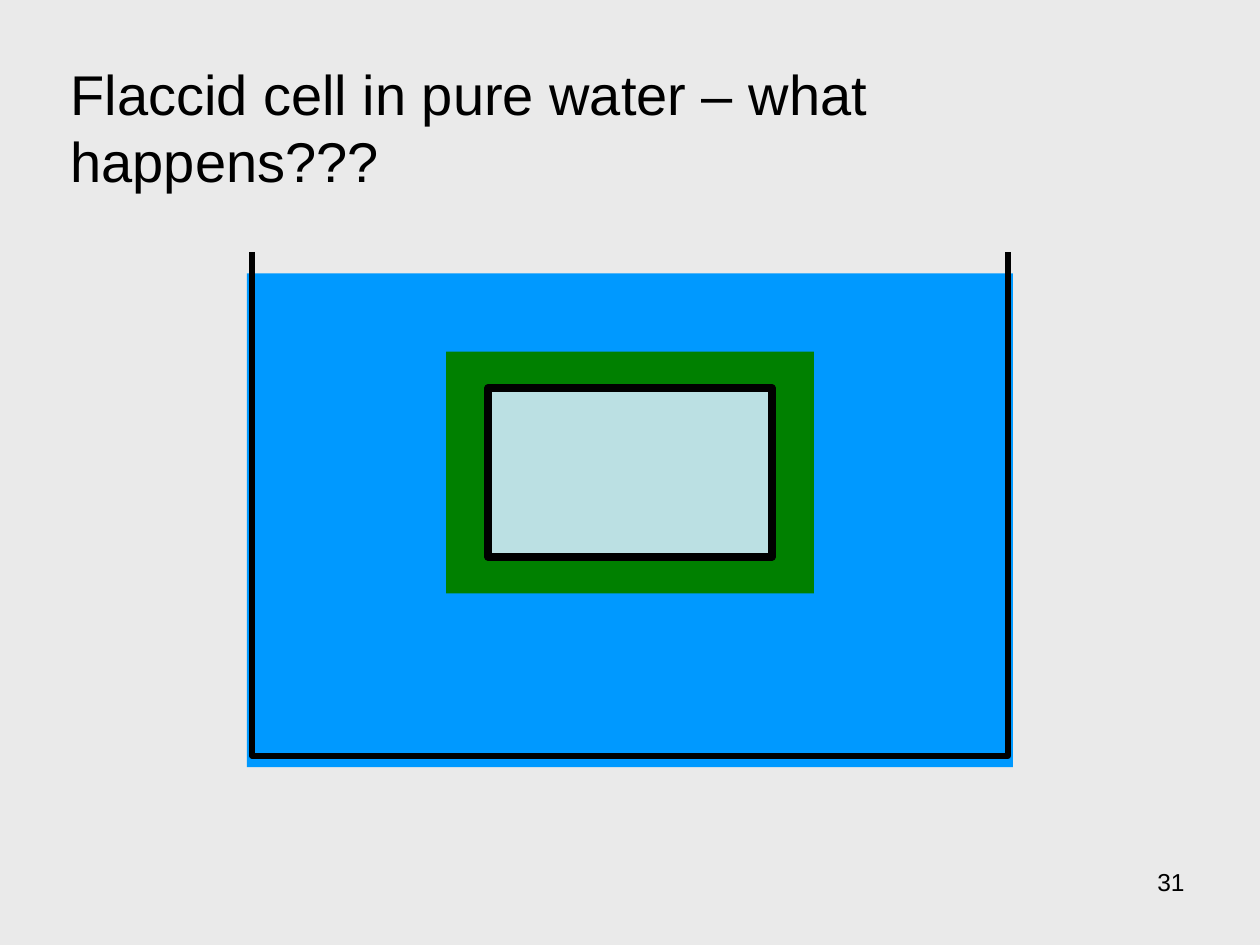
from pptx import Presentation
from pptx.dml.color import RGBColor
from pptx.enum.shapes import MSO_SHAPE as Preset
from pptx.enum.text import MSO_ANCHOR as Anchor, PP_ALIGN as Align
from pptx.util import Inches, Pt

BACKGROUND = RGBColor(0xEA, 0xEA, 0xEA)
BLACK = RGBColor(0x00, 0x00, 0x00)
WATER = RGBColor(0x00, 0x99, 0xFF)
CELL_WALL = RGBColor(0x00, 0x80, 0x00)
VACUOLE = RGBColor(0xBB, 0xE0, 0xE3)

WIDTH, HEIGHT = 10, 7.5
TITLE_BOX = (0.46, 0.42, 9, 0.63)
NUMBER_BOX = (7.17, 6.83, 2.33, 0.52)
BEAKER_BOX = (1.96, 1.67, 6.08, 4.42)
CELL_BOX = (3.54, 2.79, 2.92, 1.92)


def inset(box, left=0, top=0, right=0, bottom=0):
    """Return the box reduced by shares of its own width and height."""
    x, y, width, height = box
    return (x + left * width, y + top * height,
            width * (1 - left - right), height * (1 - top - bottom))


def place(shape, box):
    """Move and size a shape to a box in inches."""
    shape.left, shape.top, shape.width, shape.height = map(Inches, box)


def write_text(shape, text, size, align=Align.LEFT, font="Arial", color=BLACK):
    """Write one top-anchored paragraph in the given format."""
    frame = shape.text_frame
    frame.word_wrap = True
    frame.vertical_anchor = Anchor.TOP
    paragraph = frame.paragraphs[0]
    paragraph.alignment = align
    run = paragraph.add_run()
    run.text = text
    run.font.name = font
    run.font.size = Pt(size)
    run.font.color.rgb = color


def style(shape, fill=None, line_width=0):
    """Set the fill and black outline of a shape, without shadow."""
    shape.shadow.inherit = False
    if fill is None:
        shape.fill.background()
    else:
        shape.fill.solid()
        shape.fill.fore_color.rgb = fill
    if line_width:
        shape.line.color.rgb = BLACK
        shape.line.width = Pt(line_width)
    else:
        shape.line.fill.background()


def add_block(shapes, box, fill, line_width=0):
    """Add a filled rectangle."""
    block = shapes.add_shape(Preset.RECTANGLE, *map(Inches, box))
    style(block, fill, line_width)


def add_title(slide, box):
    """Place and write the title placeholder."""
    title = slide.shapes.title
    place(title, box)
    write_text(title, "Flaccid cell in pure water – what happens???", 32)


def add_number(slide, box):
    """Add the slide number at the right of its box."""
    number = slide.shapes.add_textbox(*map(Inches, box))
    write_text(number, "31", 14, align=Align.RIGHT)


def add_beaker(shapes, box):
    """Add water in an open-topped beaker."""
    add_block(shapes, inset(box, top=0.113), WATER)
    left, top, width, height = box
    right, bottom = left + width, top + height
    builder = shapes.build_freeform(left, top, scale=Inches(1))
    builder.add_line_segments(
        [(left, bottom), (right, bottom), (right, top)], close=False)
    style(builder.convert_to_shape(), line_width=3)


def add_cell(shapes, box):
    """Add a cell wall around an outlined vacuole."""
    add_block(shapes, box, CELL_WALL)
    add_block(shapes, inset(box, 0.115, 0.15, 0.115, 0.15), VACUOLE, 4.5)


def main():
    """Build and save the slide."""
    presentation = Presentation()
    presentation.slide_width = Inches(WIDTH)
    presentation.slide_height = Inches(HEIGHT)
    slide = presentation.slides.add_slide(presentation.slide_layouts[5])
    slide.background.fill.solid()
    slide.background.fill.fore_color.rgb = BACKGROUND
    add_number(slide, NUMBER_BOX)
    add_title(slide, TITLE_BOX)
    diagram = slide.shapes.add_group_shape()
    add_beaker(diagram.shapes, BEAKER_BOX)
    add_cell(diagram.shapes, CELL_BOX)
    presentation.save("out.pptx")


if __name__ == "__main__":
    main()
